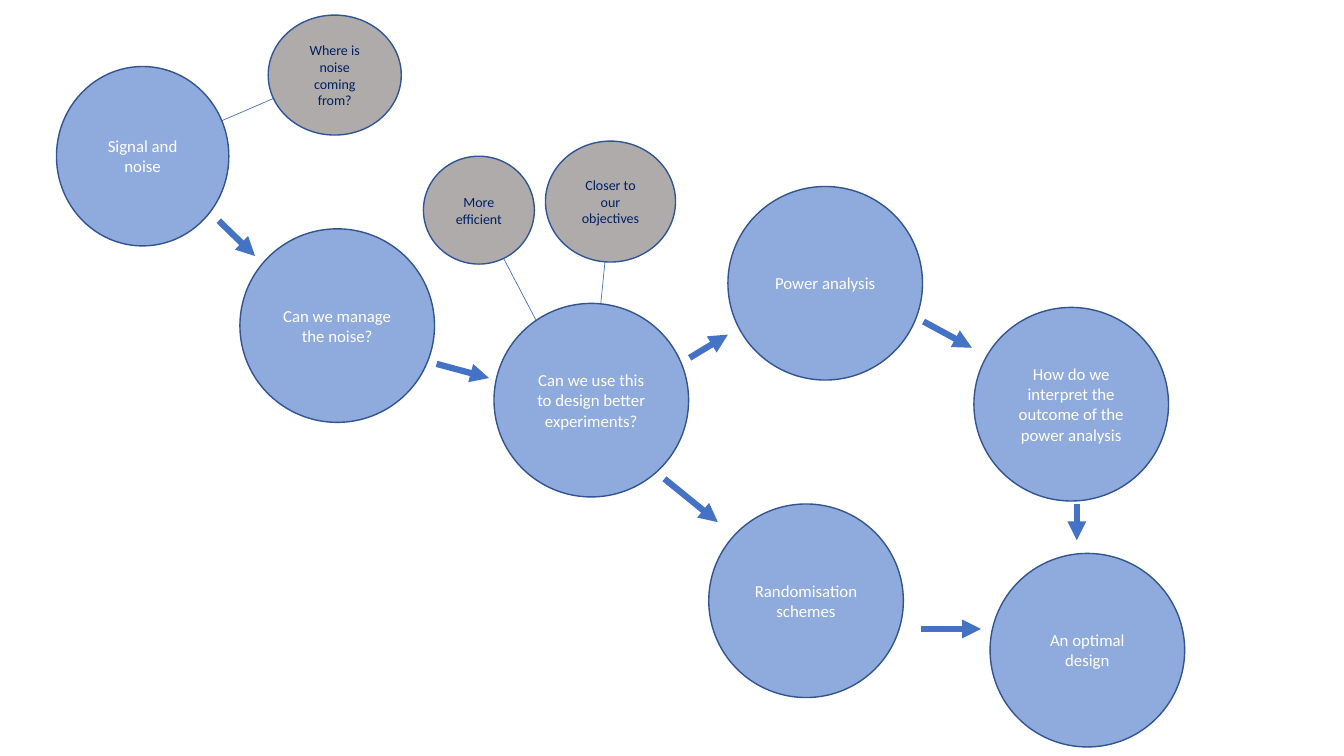
"""Build a concept map leading from signal and noise to an optimal design."""
from lxml.etree import SubElement
from pptx import Presentation
from pptx.dml.color import RGBColor
from pptx.enum.shapes import MSO_CONNECTOR, MSO_SHAPE
from pptx.enum.text import MSO_ANCHOR, PP_ALIGN
from pptx.oxml.ns import qn
from pptx.util import Inches, Pt

COLORS = {
    "topic": "8FAADC", "topic_edge": "325491", "topic_text": "FFFFFF",
    "remark": "AFABAB", "remark_edge": "2F5597", "remark_text": "002060",
    "link": "4472C4",
}
TEXT_SIZES = {"topic": 12, "remark": 10}
TOPIC_SIZE = (1.93, 1.92)

REMARK_LINKS = [
    ((6.06, 2), (5.87, 3.9)),
    ((4.72, 2.04), (5.46, 3.45)),
    ((1.66, 1.43), (3.1, 0.81)),
]
TOPICS = [
    ("Signal and noise", (0.56, 0.66), (1.71, 1.78)),
    ("Can we manage the noise?", (2.38, 2.27), TOPIC_SIZE),
    ("Can we use this to design better experiments?", (4.9, 3.01), TOPIC_SIZE),
    ("Power analysis", (7.22, 1.85), TOPIC_SIZE),
    ("How do we interpret the outcome of the power analysis", (9.66, 3.05), TOPIC_SIZE),
    ("Randomisation schemes", (7.03, 5), TOPIC_SIZE),
    ("An optimal design", (9.82, 5.49), TOPIC_SIZE),
]
REMARKS = [
    ("Where is noise coming from?", (2.66, 0.15), (1.32, 1.19)),
    ("More efficient", (4.2, 1.55), (1.1, 1.07)),
    ("Closer to our objectives", (5.41, 1.4), (1.29, 1.2)),
]
ARROWS = [
    ((2.17, 2.19), (2.53, 2.54)),
    ((4.33, 3.61), (4.85, 3.75)),
    ((6.84, 3.55), (7.22, 3.32)),
    ((9.16, 3.19), (9.64, 3.45)),
    ((6.59, 4.75), (7.12, 5.18)),
    ((9.13, 6.24), (9.73, 6.24)),
    ((10.68, 5), (10.68, 5.36)),
]


def apply(target, formats):
    for name, value in formats.items():
        setattr(target, name, value)


class ConceptMap:
    def __init__(self, slide, font="Calibri"):
        self.slide = slide
        self.font = font

    def color(self, name):
        return RGBColor.from_string(COLORS[name])

    def circle(self, kind, text, at, size):
        sp = self.slide.shapes.add_shape(
            MSO_SHAPE.OVAL, *(Inches(v) for v in at + size))
        sp.shadow.inherit = False
        sp.fill.solid()
        sp.fill.fore_color.rgb = self.color(kind)
        sp.line.color.rgb = self.color(f"{kind}_edge")
        sp.line.width = Pt(1)
        tf = sp.text_frame
        apply(tf, {"word_wrap": True, "vertical_anchor": MSO_ANCHOR.MIDDLE})
        p = tf.paragraphs[0]
        p.alignment = PP_ALIGN.CENTER
        r = p.add_run()
        r.text = text
        apply(r.font, {"name": self.font, "size": Pt(TEXT_SIZES[kind])})
        r.font.color.rgb = self.color(f"{kind}_text")

    def link(self, start, end, width=0.5):
        cx = self.slide.shapes.add_connector(
            MSO_CONNECTOR.STRAIGHT, *(Inches(v) for v in start + end))
        cx.line.color.rgb = self.color("link")
        cx.line.width = Pt(width)
        SubElement(cx._element.spPr, qn("a:effectLst"))
        return cx

    def arrow(self, start, end):
        cx = self.link(start, end, 4.5)
        SubElement(cx.line._get_or_add_ln(), qn("a:tailEnd"), type="triangle")


def main():
    prs = Presentation()
    apply(prs, {"slide_width": Inches(13.33), "slide_height": Inches(7.5)})
    s = prs.slides.add_slide(prs.slide_layouts[6])
    concept_map = ConceptMap(s)
    for start, end in REMARK_LINKS:
        concept_map.link(start, end)
    for kind, circles in (("topic", TOPICS), ("remark", REMARKS)):
        for text, at, size in circles:
            concept_map.circle(kind, text, at, size)
    for start, end in ARROWS:
        concept_map.arrow(start, end)
    prs.save("out.pptx")


if __name__ == "__main__":
    main()
